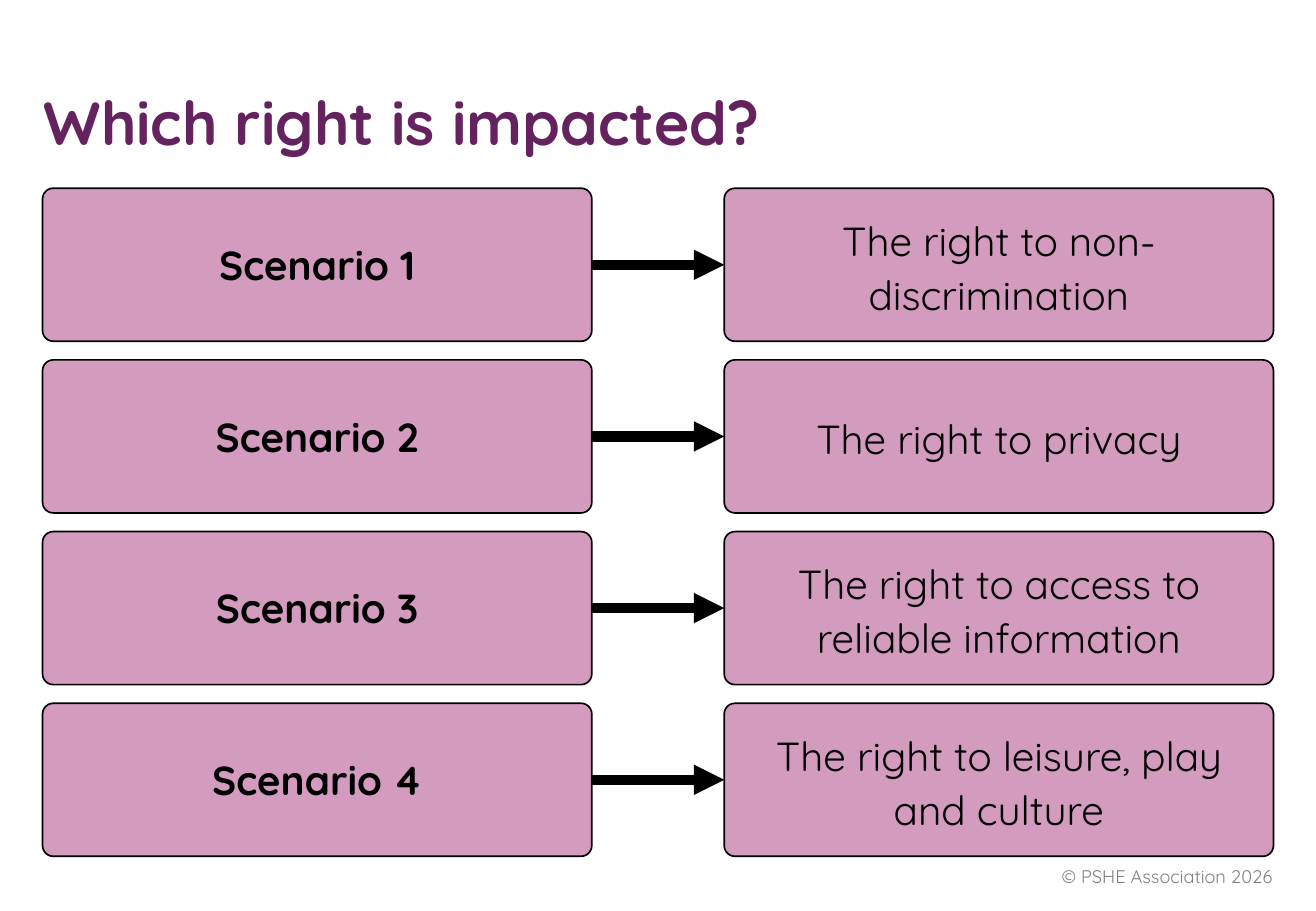
from lxml import etree
from pptx import Presentation
from pptx.dml.color import RGBColor
from pptx.enum.shapes import MSO_CONNECTOR as Link, MSO_SHAPE as Form
from pptx.enum.text import MSO_ANCHOR as Anchor, MSO_AUTO_SIZE as Fit, PP_ALIGN as Align
from pptx.oxml.ns import qn
from pptx.util import Inches, Pt

FONT = "Quicksand"
PLUM, PINK, BLACK, GREY = "64235E", "D39BBD", "000000", "808080"
WIDE, HIGH = 10.83, 7.5
RIGHTS = [
    "The right to non-discrimination",
    "The right to privacy",
    "The right to access to reliable information",
    "The right to leisure, play and culture",
]


def color(code):
    """Turn a hex string into a colour."""
    return RGBColor.from_string(code)


def place(box):
    """Turn left, top, width and height in inches into lengths."""
    return [Inches(side) for side in box]


def write(shape, text, size, code, align, anchor, bold=False, lead=None):
    """Put one styled paragraph into a shape."""
    frame = shape.text_frame
    frame.text = text
    frame.word_wrap = True
    frame.auto_size = Fit.NONE
    frame.vertical_anchor = anchor
    para = frame.paragraphs[0]
    para.alignment = align
    para.space_before = Pt(0)
    if lead:
        para.line_spacing = Pt(lead)
    font = para.runs[0].font
    font.name, font.size, font.bold = FONT, Pt(size), bold
    font.color.rgb = color(code)


def head(slide, box):
    """Fill the title placeholder."""
    title = slide.shapes.title
    title.left, title.top, title.width, title.height = place(box)
    write(title, "Which right is impacted?", 36, PLUM, Align.LEFT, Anchor.BOTTOM, True, 43)


def foot(slide, box):
    """Add the copyright line."""
    note = slide.shapes.add_textbox(*place(box))
    write(note, "© PSHE Association 2026", 10.8, GREY, Align.RIGHT, Anchor.MIDDLE)


def card(slide, box, text, bold=False, lead=None):
    """Add one rounded card."""
    shape = slide.shapes.add_shape(Form.ROUNDED_RECTANGLE, *place(box))
    shape.shadow.inherit = False
    shape.adjustments[0] = 0.07
    shape.fill.solid()
    shape.fill.fore_color.rgb = color(PINK)
    shape.line.color.rgb = color(BLACK)
    shape.line.width = Pt(1)
    shape.text_frame.margin_top = Inches(0.04)
    write(shape, text, 24, BLACK, Align.CENTER, Anchor.MIDDLE, bold, lead)
    return shape


def arrow(slide, start, end):
    """Join the right side of one card to the left side of another."""
    link = slide.shapes.add_connector(Link.STRAIGHT, 0, 0, 0, 0)
    link.begin_connect(start, 3)
    link.end_connect(end, 1)
    link.line.color.rgb = color(BLACK)
    link.line.width = Pt(6)
    etree.SubElement(link.line._get_or_add_ln(), qn("a:tailEnd"), type="triangle")
    etree.SubElement(link._element.spPr, qn("a:effectLst"))


def pairs(slide, box):
    """Lay out scenarios and rights in two columns joined by arrows."""
    left, top, width, height = box
    wide, high = 4.52, 1.26
    step = (height - high) / (len(RIGHTS) - 1)
    for row, right in enumerate(RIGHTS):
        y = top + row * step
        case = card(slide, (left, y, wide, high), f"Scenario {row + 1}", bold=True)
        goal = card(slide, (left + width - wide, y, wide, high), right, lead=32)
        arrow(slide, case, goal)


def main():
    """Build and save the slide."""
    deck = Presentation()
    deck.slide_width, deck.slide_height = Inches(WIDE), Inches(HIGH)
    slide = deck.slides.add_slide(deck.slide_layouts[5])
    head(slide, (0.26, 0.59, 8.48, 0.76))
    foot(slide, (8.13, 7.01, 2.44, 0.4))
    pairs(slide, (0.35, 1.55, 10.13, 5.5))
    deck.save("out.pptx")


if __name__ == "__main__":
    main()
